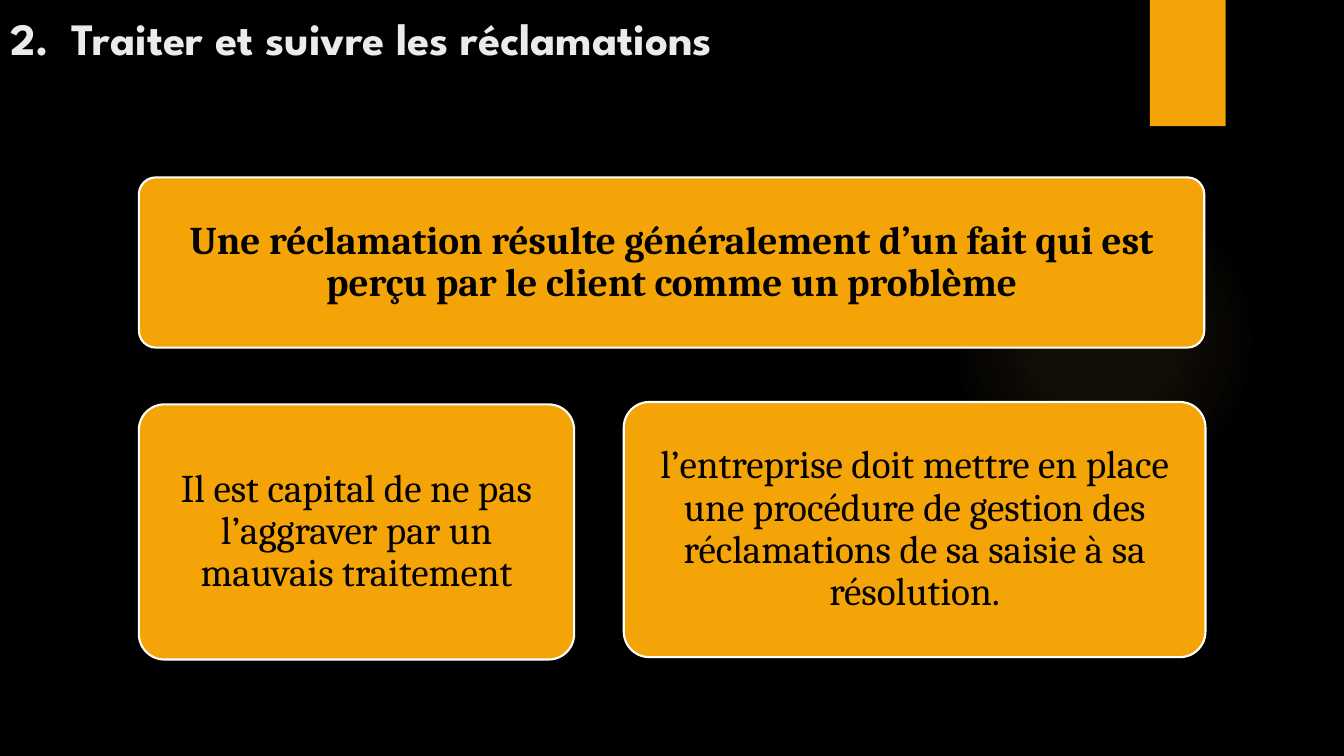
from dataclasses import dataclass

from lxml import etree
from pptx import Presentation
from pptx.dml.color import RGBColor as RGB
from pptx.enum.shapes import MSO_SHAPE as SHAPE
from pptx.enum.text import MSO_ANCHOR as ANCHOR, MSO_AUTO_SIZE as AUTOSIZE, PP_ALIGN as ALIGN
from pptx.oxml import parse_xml
from pptx.oxml.ns import nsdecls, qn
from pptx.util import Cm, Pt


@dataclass(frozen=True)
class Theme:
    background: RGB = RGB(0x00, 0x00, 0x00)
    accent: RGB = RGB(0xF5, 0xA4, 0x08)
    glow: RGB = RGB(0xFA, 0xC9, 0x6A)
    outline: RGB = RGB(0xFF, 0xFF, 0xFF)
    title: RGB = RGB(0xEB, 0xEB, 0xEB)
    text: RGB = RGB(0x00, 0x00, 0x00)
    title_font: str = "League Spartan"
    body_font: str = "Cambria"
    title_size: Pt = Pt(32)
    body_size: Pt = Pt(28)


THEME = Theme()
GLOW_STOPS = ((0, 7), (36, 6), (69, 0))
CARDS = (
    ("Une réclamation résulte généralement d’un fait qui est perçu par le client comme un problème",
     (3.5, 4.47, 26.85, 4.29), True),
    ("Il est capital de ne pas l’aggraver par un mauvais traitement",
     (3.5, 10.19, 10.97, 6.43), False),
    ("l’entreprise doit mettre en place une procédure de gestion des réclamations "
     "de sa saisie à sa résolution.",
     (15.72, 10.13, 14.66, 6.43), False),
)


def apply(target, values):
    for name, value in values.items():
        setattr(target, name, value)


def write(p, text, color, **font):
    r = p.add_run()
    r.text = text
    apply(r.font, font)
    r.font.color.rgb = color


def add_block(s, kind, box):
    sp = s.shapes.add_shape(kind, *map(Cm, box))
    sp.shadow.inherit = False
    sp.fill.solid()
    sp.fill.fore_color.rgb = THEME.accent
    sp.line.fill.background()
    return sp


def add_glow(s, box):
    sp = add_block(s, SHAPE.OVAL, box)
    stops = "".join(
        f'<a:gs pos="{pos * 1000}"><a:srgbClr val="{THEME.glow}">'
        f'<a:alpha val="{alpha * 1000}"/></a:srgbClr></a:gs>'
        for pos, alpha in GLOW_STOPS)
    gradient = parse_xml(
        f'<a:gradFill {nsdecls("a")}><a:gsLst>{stops}</a:gsLst><a:path path="circle">'
        '<a:fillToRect l="50000" t="50000" r="50000" b="50000"/></a:path></a:gradFill>')
    spPr = sp.element.spPr
    spPr.replace(spPr.find(qn("a:solidFill")), gradient)


def add_title(s, number, text):
    sp = s.shapes.title
    apply(sp, {"left": Cm(0), "top": Cm(0), "width": Cm(24.51), "height": Cm(1.75)})
    tf = sp.text_frame
    apply(tf, {"vertical_anchor": ANCHOR.BOTTOM, "auto_size": AUTOSIZE.NONE, "word_wrap": True})
    p = tf.paragraphs[0]
    p.alignment = ALIGN.LEFT
    tabs = etree.SubElement(p._p.get_or_add_pPr(), qn("a:tabLst"))
    etree.SubElement(tabs, qn("a:tab"), pos=str(Cm(1.55)), algn="l")
    write(p, f"{number}\t{text}", THEME.title,
          name=THEME.title_font, size=THEME.title_size, bold=True)


def add_card(s, text, box, bold):
    sp = add_block(s, SHAPE.ROUNDED_RECTANGLE, box)
    sp.adjustments[0] = 0.1
    sp.line.color.rgb = THEME.outline
    sp.line.width = Pt(1.5)
    tf = sp.text_frame
    apply(tf, {"word_wrap": True, "vertical_anchor": ANCHOR.MIDDLE})
    apply(tf, {f"margin_{side}": Cm(0.3) for side in ("left", "top", "right", "bottom")})
    p = tf.paragraphs[0]
    apply(p, {"alignment": ALIGN.CENTER, "line_spacing": 0.9})
    write(p, text, THEME.text, name=THEME.body_font, size=THEME.body_size, bold=bold)


def main():
    prs = Presentation()
    apply(prs, {"slide_width": Cm(33.87), "slide_height": Cm(19.05)})
    s = prs.slides.add_slide(prs.slide_layouts[5])
    s.background.fill.solid()
    s.background.fill.fore_color.rgb = THEME.background
    add_glow(s, (23.9, 4.65, 7.82, 7.82))
    add_block(s, SHAPE.RECTANGLE, (28.98, 0, 1.91, 3.18))
    add_title(s, "2.", "Traiter et suivre les réclamations")
    for card in CARDS:
        add_card(s, *card)
    prs.save("out.pptx")


if __name__ == "__main__":
    main()
